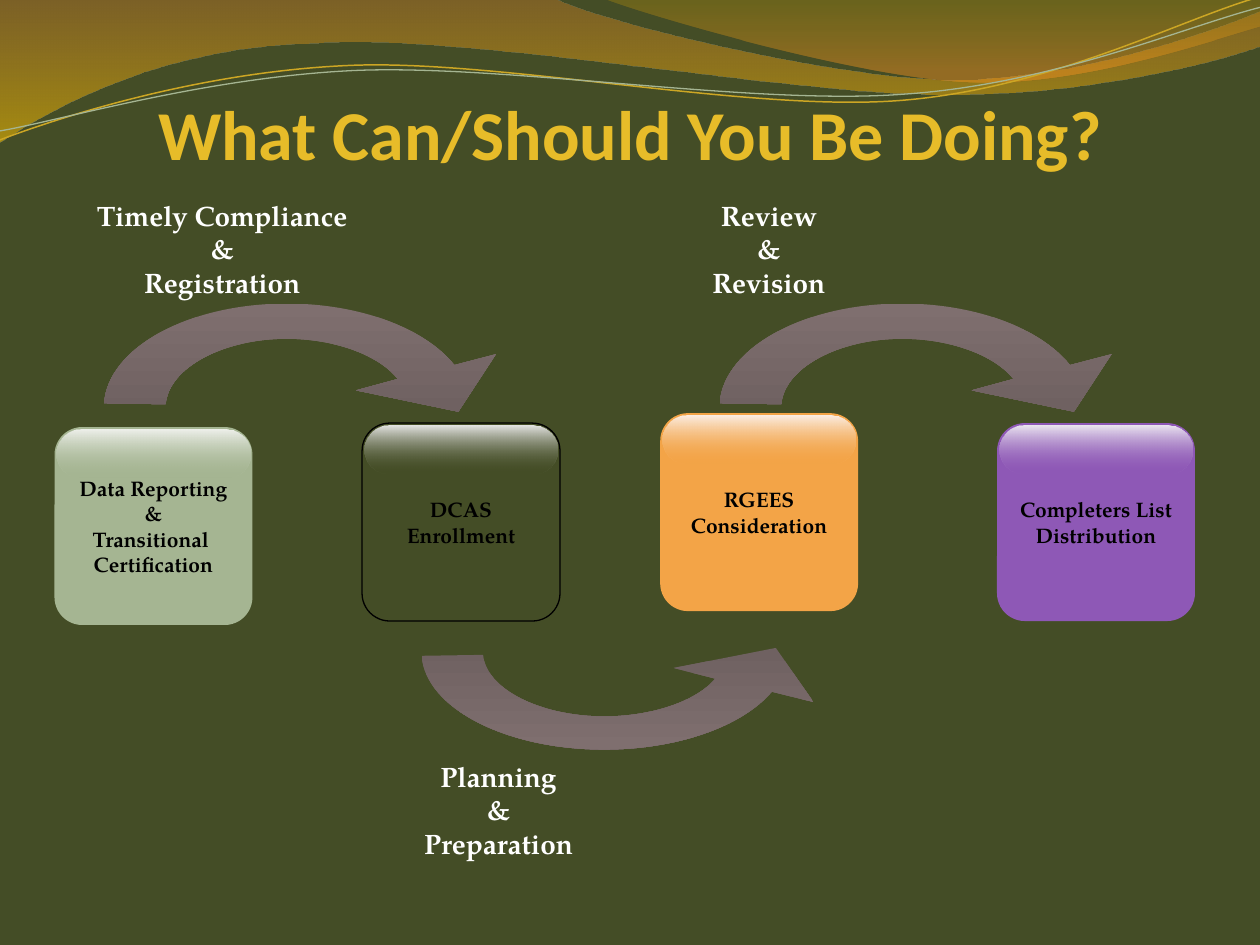
from dataclasses import dataclass

from pptx import Presentation
from pptx.dml.color import RGBColor
from pptx.enum import shapes, text
from pptx.oxml import ns
from pptx.util import Cm, Pt
from lxml import etree


@dataclass(frozen=True)
class Theme:
    background: str = "444D26"
    gold: str = "E7BC29"
    white: str = "FFFFFF"
    black: str = "000000"
    arrow_light: str = "7F6F6F"
    arrow_dark: str = "6F6161"
    title_font: str = "Calibri"
    body_font: str = "TeX Gyre Pagella"
    title_size: int = 40
    label_size: int = 16
    tile_size: int = 12


THEME = Theme()

# Outlines in cm: a pair is a straight segment, six numbers are a Bezier curve.
WAVE_WIDE = [
    (0, 0), (11.18, -0.03),
    (12.09, 0.43, 16.87, 1.6, 19.25, 1.6), (21.67, 1.6, 24.33, 0.66, 25.4, 0.23),
    (25.43, 0.91),
    (24.97, 1.12, 22.1, 1.93, 18.95, 1.9), (15.8, 1.9, 9.7, 0.71, 6.53, 0.86),
    (3.28, 0.91, 1.17, 2.11, -0.03, 2.87),
]
WAVE_RIGHT = [
    (12.17, -0.03), (12.93, 0.28, 17.32, 1.57, 19.53, 1.65),
    (21.74, 1.75, 24.41, 0.81, 25.4, 0.53), (25.4, 0),
]
STRAND_GOLD = [
    (0, 2.82), (1.22, 2.36, 4.01, 1.45, 7.04, 1.32),
    (10.03, 1.19, 15.06, 2.26, 18.11, 2.03), (21.16, 1.8, 23.83, 0.38, 25.35, -0.05),
]
STRAND_GREEN = [
    (0, 2.64), (1.19, 2.44, 4.17, 1.55, 7.19, 1.42),
    (10.24, 1.3, 15.16, 2.13, 18.21, 1.9), (21.23, 1.7, 23.9, 0.53, 25.4, 0.15),
]
ARC_ARROW = [
    (5.92, 1.52), (5.54, 1.04, 4.65, 0.71, 3.68, 0.71),
    (2.39, 0.71, 1.3, 1.3, 1.24, 2.03), (0, 2.01),
    (0.08, 0.89, 1.7, 0, 3.68, 0), (5.13, 0, 6.45, 0.48, 7.06, 1.24),
    (7.9, 1.02), (7.14, 2.18), (5.08, 1.75),
]

# Left, top, colour, highlight colour, outline, lines
TILES = [
    (1.1, 8.61, "A5B592", "EFF1EC", None,
     ["Data Reporting", "&", "Transitional ", "Certification"]),
    (7.3, 8.53, THEME.background, "E6E6E5", THEME.black, ["DCAS", "Enrollment"]),
    (13.31, 8.33, "F3A447", "FCEFE6", None, ["RGEES", "Consideration"]),
    (20.1, 8.53, "8E58B6", "ECE7F1", None, ["Completers List", "Distribution"]),
]

# Centre x, centre y, lines
LABELS = [
    (4.48, 5.01, ["Timely Compliance", "&", "Registration"]),
    (10.05, 16.32, ["Planning", "&", "Preparation"]),
    (15.5, 5.01, ["Review", "&", "Revision"]),
]


def rgb(value):
    return RGBColor.from_string(value)


def fill_gradient(shape, *stops):
    """Fill from top to bottom; each stop is (position, colour, opacity in percent)."""
    shape.fill.gradient()
    shape.fill.gradient_angle = 270
    for stop, (position, colour, _) in zip(shape.fill.gradient_stops, stops):
        stop.position = position
        stop.color.rgb = rgb(colour)
    colours = shape._element.xpath(".//a:gs/a:srgbClr")
    for node, (_, _, opacity) in zip(colours, stops):
        if opacity < 100:
            etree.SubElement(node, ns.qn("a:alpha"), val=str(opacity * 1000))


def bend_segments(shape, outline):
    """Merge the three straight steps that stand for each curve into one Bezier."""
    steps = iter(shape._element.xpath(".//a:path/a:lnTo"))
    for segment in outline[1:]:
        first = next(steps)
        if len(segment) == 6:
            first.tag = ns.qn("a:cubicBezTo")
            for step in (next(steps), next(steps)):
                first.append(step[0])
                step.getparent().remove(step)


def add_outline(page, outline, left=0, top=0, stretch=1, close=True):
    points = [(Cm(left + segment[i]), Cm(top + segment[i + 1] * stretch))
              for segment in outline for i in range(0, len(segment), 2)]
    builder = page.shapes.build_freeform(*points[0], scale=1)
    builder.add_line_segments(points[1:], close=close)
    shape = builder.convert_to_shape()
    bend_segments(shape, outline)
    shape.shadow.inherit = False
    shape.line.fill.background()
    return shape


def add_strand(page, outline, colour, width):
    strand = add_outline(page, outline, close=False)
    strand.fill.background()
    strand.line.color.rgb = rgb(colour)
    strand.line.width = Pt(width)


def add_arc_arrow(page, left, top, stretch=1):
    """A negative stretch mirrors the arrow, with its shading, to sweep below."""
    colours = [THEME.arrow_light, THEME.arrow_dark]
    if stretch < 0:
        colours.reverse()
    arrow = add_outline(page, ARC_ARROW, left, top, stretch)
    fill_gradient(arrow, (0, colours[0], 100), (1, colours[1], 100))


def write_lines(frame, lines, font, size, colour):
    frame.text = "\n".join(lines)
    for para in frame.paragraphs:
        para.alignment = text.PP_ALIGN.CENTER
        for span in para.runs:
            span.font.name = font
            span.font.size = Pt(size)
            span.font.bold = True
            span.font.color.rgb = rgb(colour)


def add_rounded(page, left, top, width, height, corner):
    box = page.shapes.add_shape(shapes.MSO_SHAPE.ROUNDED_RECTANGLE,
                                Cm(left), Cm(top), Cm(width), Cm(height))
    box.adjustments[0] = corner
    box.shadow.inherit = False
    box.line.fill.background()
    return box


def add_tile(page, left, top, colour, highlight, outline, lines):
    tile = add_rounded(page, left, top, 3.99, 3.99, 0.14)
    tile.fill.solid()
    tile.fill.fore_color.rgb = rgb(colour)
    if outline:
        tile.line.color.rgb = rgb(outline)
        tile.line.width = Pt(0.75)
    tile.text_frame.word_wrap = False
    tile.text_frame.vertical_anchor = text.MSO_ANCHOR.MIDDLE
    write_lines(tile.text_frame, lines, THEME.body_font, THEME.tile_size, THEME.black)
    gloss = add_rounded(page, left + 0.05, top + 0.05, 3.89, 0.97, 0.5)
    fill_gradient(gloss, (0, highlight, 100), (1, colour, 0))


def add_label(page, centre_x, centre_y, lines, width=8.2, height=2.57):
    box = page.shapes.add_textbox(Cm(centre_x - width / 2), Cm(centre_y - height / 2),
                                  Cm(width), Cm(height))
    box.text_frame.word_wrap = True
    box.text_frame.vertical_anchor = text.MSO_ANCHOR.MIDDLE
    write_lines(box.text_frame, lines, THEME.body_font, THEME.label_size, THEME.white)


def set_title(page, words):
    title = page.shapes.title
    title.left, title.top, title.width, title.height = Cm(2.6), Cm(2.1), Cm(20.2), Cm(1.42)
    frame = title.text_frame
    frame.margin_left = frame.margin_right = frame.margin_bottom = 0
    frame.auto_size = text.MSO_AUTO_SIZE.NONE
    frame.vertical_anchor = text.MSO_ANCHOR.BOTTOM
    write_lines(frame, [words], THEME.title_font, THEME.title_size, THEME.gold)


def main():
    deck = Presentation()
    deck.slide_width, deck.slide_height = Cm(25.4), Cm(19.05)
    page = deck.slides.add_slide(deck.slide_layouts[5])
    page.background.fill.solid()
    page.background.fill.fore_color.rgb = rgb(THEME.background)

    fill_gradient(add_outline(page, WAVE_WIDE), (0, "C07A28", 45), (1, "F7BF00", 55))
    fill_gradient(add_outline(page, WAVE_RIGHT), (0, "C09709", 30), (0.8, "F59320", 45))
    add_strand(page, STRAND_GOLD, "CCA624", 0.85)
    add_strand(page, STRAND_GREEN, "A5B592", 0.75)

    set_title(page, "What Can/Should You Be Doing?")
    for left, top, stretch in [(2.1, 6.12, 1), (8.5, 15.11, -0.94), (14.51, 6.12, 1)]:
        add_arc_arrow(page, left, top, stretch)
    for label in LABELS:
        add_label(page, *label)
    for tile in TILES:
        add_tile(page, *tile)
    deck.save("out.pptx")


if __name__ == "__main__":
    main()
